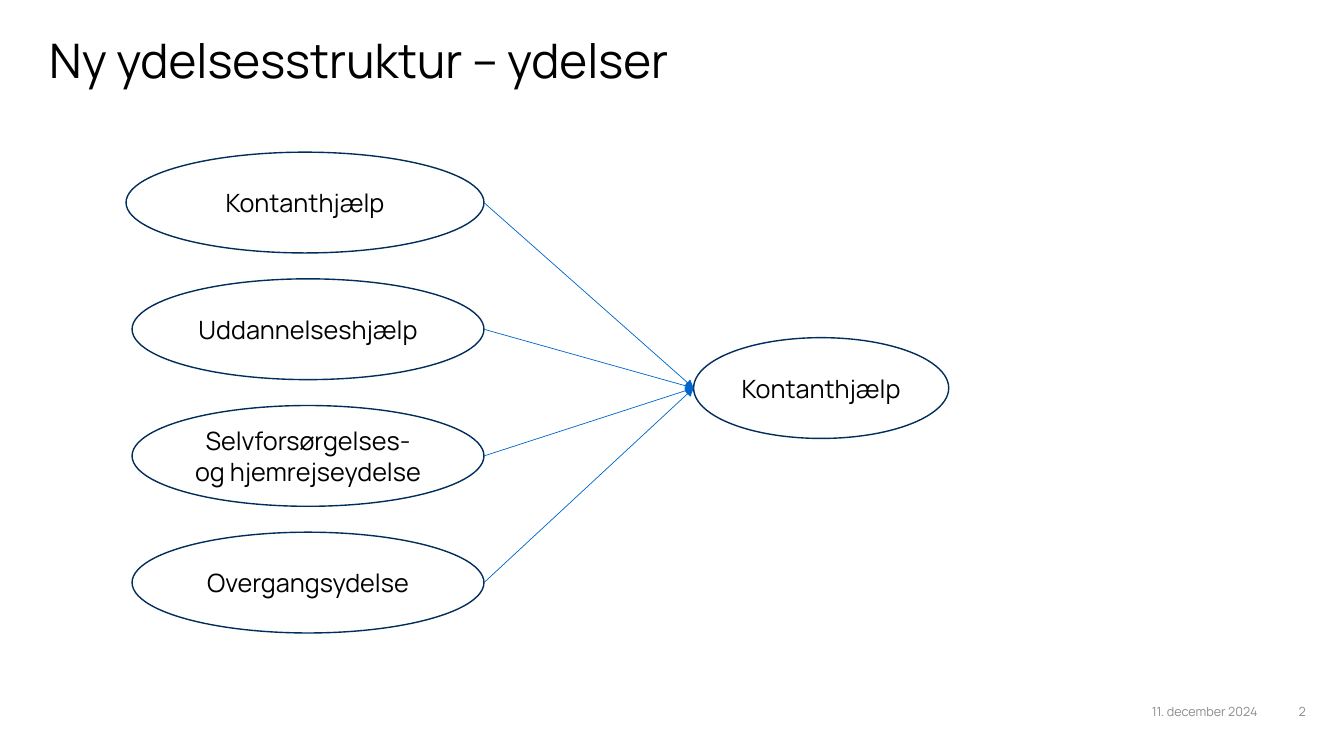
from lxml.etree import SubElement
from pptx import Presentation
from pptx.dml.color import RGBColor
from pptx.enum.shapes import MSO_CONNECTOR, MSO_SHAPE
from pptx.enum.text import MSO_ANCHOR, PP_ALIGN
from pptx.oxml.ns import qn
from pptx.util import Inches, Pt

FONT = "Manrope"
BLACK, GREY, NAVY, BLUE = "000000", "8C8C8C", "002D59", "0066CC"

OLD_BENEFITS = [
    "Kontanthjælp",
    "Uddannelseshjælp",
    "Selvforsørgelses- og hjemrejseydelse",
    "Overgangsydelse",
]
OVAL_HEIGHT = 1
OLD_RIGHT = 4.8
FIRST_TOP, LAST_TOP = 1.51, 5.28
NEW_LEFT, NEW_TOP, NEW_WIDTH = 6.88, 3.35, 2.53


def color(value):
    return RGBColor.from_string(value)


def write(shape, text, size, text_color, align, anchor=MSO_ANCHOR.MIDDLE):
    frame = shape.text_frame
    frame.word_wrap = True
    frame.vertical_anchor = anchor
    para = frame.paragraphs[0]
    para.alignment = align
    span = para.add_run()
    span.text = text
    span.font.name = FONT
    span.font.size = Pt(size)
    span.font.color.rgb = color(text_color)
    return para


def add_text(page, text, left, top, width, height, *style):
    """Add a text box; style is passed on to write()."""
    box = page.shapes.add_textbox(
        Inches(left), Inches(top), Inches(width), Inches(height))
    return write(box, text, *style)


def add_oval(page, text, left, top, width):
    oval = page.shapes.add_shape(
        MSO_SHAPE.OVAL, Inches(left), Inches(top), Inches(width), Inches(OVAL_HEIGHT))
    oval.shadow.inherit = False
    oval.fill.background()
    oval.line.color.rgb = color(NAVY)
    oval.line.width = Pt(1)
    write(oval, text, 18, BLACK, PP_ALIGN.CENTER)


def add_arrow(page, start_x, start_y, end_x, end_y):
    arrow = page.shapes.add_connector(
        MSO_CONNECTOR.STRAIGHT,
        Inches(start_x), Inches(start_y), Inches(end_x), Inches(end_y))
    arrow.line.color.rgb = color(BLUE)
    arrow.line.width = Pt(0.5)
    SubElement(arrow.line._get_or_add_ln(), qn("a:tailEnd"), type="triangle")
    SubElement(arrow._element.spPr, qn("a:effectLst"))


def main():
    deck = Presentation()
    deck.slide_width, deck.slide_height = Inches(13.33), Inches(7.5)
    page = deck.slides.add_slide(deck.slide_layouts[6])

    title = add_text(page, "Ny ydelsesstruktur – ydelser", 0.39, 0.32, 12.57, 0.68,
                     34, BLACK, PP_ALIGN.LEFT, MSO_ANCHOR.TOP)
    title.line_spacing = 0.9

    add_oval(page, "Kontanthjælp", NEW_LEFT, NEW_TOP, NEW_WIDTH)
    step = (LAST_TOP - FIRST_TOP) / (len(OLD_BENEFITS) - 1)
    for row, benefit in enumerate(OLD_BENEFITS):
        top = FIRST_TOP + row * step
        width = 3.55 if row == 0 else 3.49
        add_oval(page, benefit, OLD_RIGHT - width, top, width)
        add_arrow(page, OLD_RIGHT, top + OVAL_HEIGHT / 2,
                  NEW_LEFT, NEW_TOP + OVAL_HEIGHT / 2)

    for text, left, width in [("11. december 2024", 11.31, 1.26), ("2", 12.59, 0.46)]:
        add_text(page, text, left, 6.86, width, 0.4, 9, GREY, PP_ALIGN.RIGHT)

    deck.save("out.pptx")


if __name__ == "__main__":
    main()
